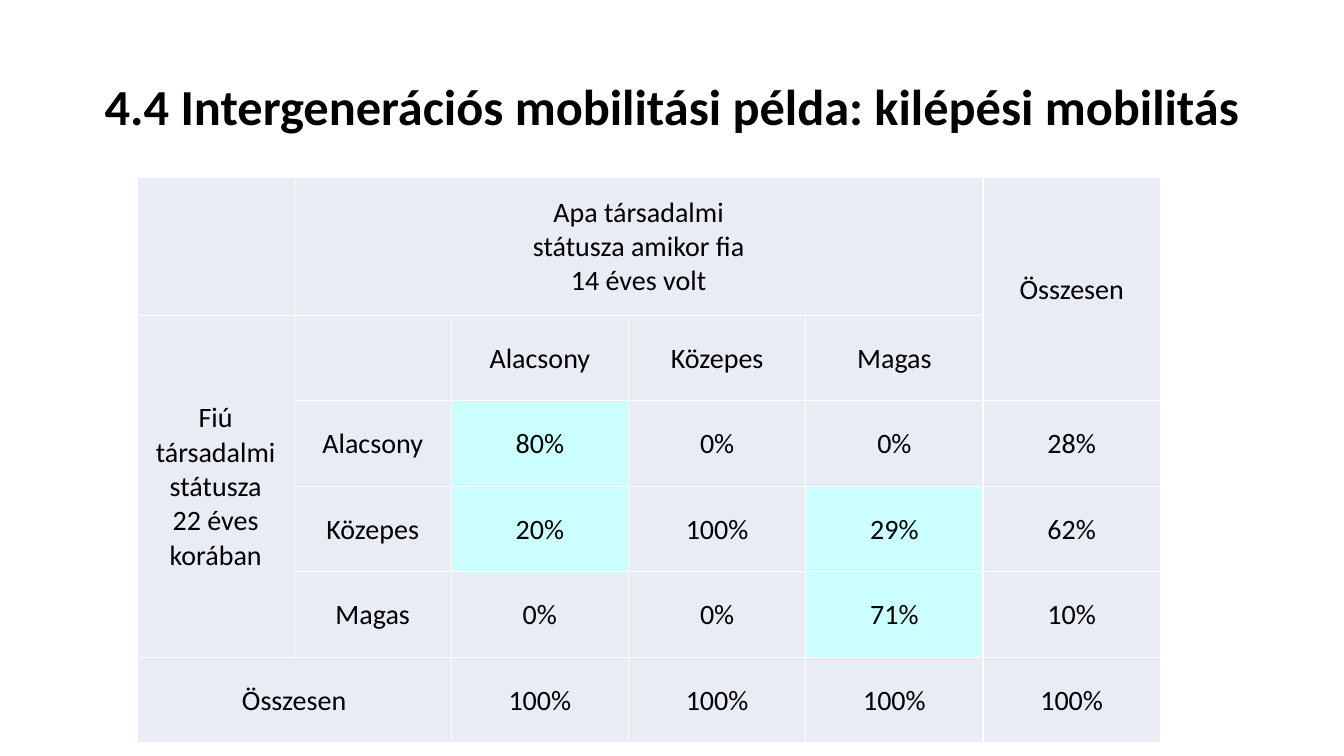
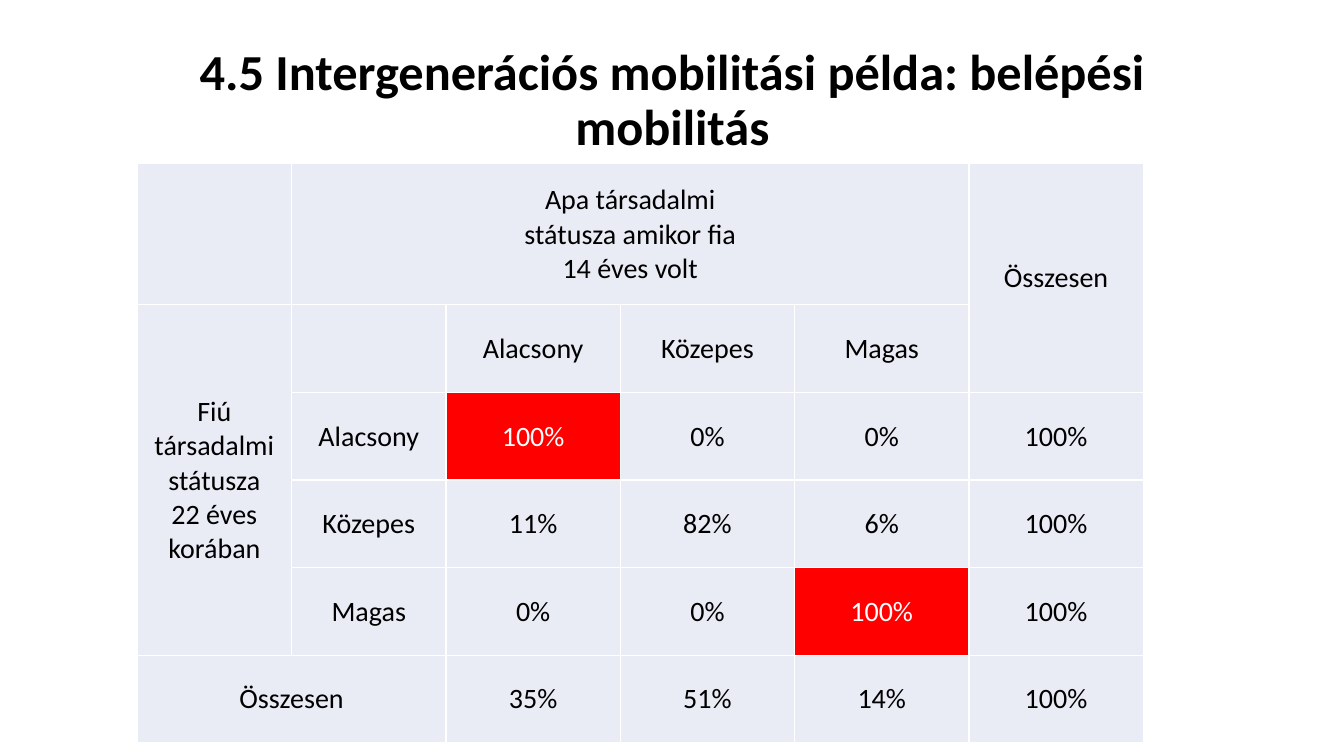
import collections

import pptx
import pptx.dml.color
import pptx.enum.text
import pptx.oxml
import pptx.oxml.ns
import pptx.util

Box = collections.namedtuple("Box", "left top width height")

SLIDE_WIDTH, SLIDE_HEIGHT = 13.33, 7.5
FONT = "Calibri"
BLACK, WHITE, PALE, CYAN, RED = "000000", "FFFFFF", "E9EBF5", "CCFFFF", "FF0000"
TITLE_FORMAT = {"name": FONT, "size": pptx.util.Pt(36), "bold": True}
CELL_FORMAT = {"name": FONT, "size": pptx.util.Pt(20), "bold": False}
CELL_MARGINS = {"margin_left": 0.01, "margin_right": 0.01, "margin_top": 0.01, "margin_bottom": 0}
COLUMN_SHARES = [0.886, 0.886, 1, 1, 1, 1]
ROW_SHARES = [1.615, 1, 1, 1, 1, 1]
LEVELS = ["Alacsony", "Közepes", "Magas"]
FATHER = "Apa társadalmi\nstátusza amikor fia\n14 éves volt"
SON = ["Fiú társadalmi\nstátusza", "22 éves\nkorában"]
TOTAL = "Összesen"
MERGES = [((0, 1), (0, 4)), ((0, 5), (1, 5)), ((1, 0), (4, 0)), ((5, 0), (5, 1))]

TITLE_LEFT, TITLE_TOP, TITLE_WIDTH = 0.92, 0.4, 11.5
TABLE_LEFT, TABLE_BOTTOM = 1.36, 7.37

SLIDES = [
    {
        "title": "4.4 Intergenerációs mobilitási példa: kilépési mobilitás",
        "title_height": 1.36,
        "table_width": 10.15,
        "shares": [
            ["80%", "0%", "0%", "28%"],
            ["20%", "100%", "29%", "62%"],
            ["0%", "0%", "71%", "10%"],
            ["100%", "100%", "100%", "100%"],
        ],
        "highlights": [(2, 2), (3, 2), (3, 4), (4, 4)],
        "highlight_colours": (CYAN, BLACK),
    },
    {
        "title": "4.5 Intergenerációs mobilitási példa: belépési mobilitás",
        "title_height": 1.22,
        "table_width": 9.98,
        "shares": [
            ["100%", "0%", "0%", "100%"],
            ["11%", "82%", "6%", "100%"],
            ["0%", "0%", "100%", "100%"],
            ["35%", "51%", "14%", "100%"],
        ],
        "highlights": [(2, 2), (4, 4)],
        "highlight_colours": (RED, WHITE),
    },
]


def colour(value):
    return pptx.dml.color.RGBColor.from_string(value)


def inches(box):
    return [pptx.util.Inches(length) for length in box]


def apply(target, values):
    for attribute, value in values.items():
        setattr(target, attribute, value)


def write(frame, paragraphs, font_format, ink):
    for index, text in enumerate(paragraphs):
        paragraph = frame.add_paragraph() if index else frame.paragraphs[0]
        paragraph.alignment = pptx.enum.text.PP_ALIGN.CENTER
        for number, line in enumerate(text.split("\n")):
            if number:
                paragraph.add_line_break()
            run = paragraph.add_run()
            run.text = line
            apply(run.font, font_format)
            run.font.color.rgb = colour(ink)


def add_title(slide, box, text):
    frame = slide.shapes.add_textbox(*inches(box)).text_frame
    frame.word_wrap = True
    frame.vertical_anchor = pptx.enum.text.MSO_ANCHOR.MIDDLE
    write(frame, [text], TITLE_FORMAT, BLACK)
    frame.paragraphs[0].line_spacing = 0.9


def add_borders(cell):
    properties = cell._tc.get_or_add_tcPr()
    for side in ("lnL", "lnR", "lnT", "lnB"):
        properties.append(pptx.oxml.parse_xml(
            f'<a:{side} {pptx.oxml.ns.nsdecls("a")} w="12700"><a:solidFill>'
            f'<a:srgbClr val="{WHITE}"/></a:solidFill></a:{side}>'
        ))


def style_cell(cell, fill):
    add_borders(cell)
    cell.fill.solid()
    cell.fill.fore_color.rgb = colour(fill)
    cell.vertical_anchor = pptx.enum.text.MSO_ANCHOR.MIDDLE
    apply(cell, {side: pptx.util.Inches(size) for side, size in CELL_MARGINS.items()})


def mobility_texts(shares):
    texts = {(0, 1): [FATHER], (0, 5): [TOTAL], (1, 0): SON, (5, 0): [TOTAL]}
    for index, level in enumerate(LEVELS, 2):
        texts[1, index] = texts[index, 1] = [level]
    for row, values in enumerate(shares, 2):
        for column, value in enumerate(values, 2):
            texts[row, column] = [value]
    return texts


def add_mobility_table(slide, box, shares, highlights, highlight_colours):
    table = slide.shapes.add_table(len(ROW_SHARES), len(COLUMN_SHARES), *inches(box)).table
    apply(table, {"first_row": False, "horz_banding": False})
    for column, share in zip(table.columns, COLUMN_SHARES):
        column.width = pptx.util.Inches(box.width * share / sum(COLUMN_SHARES))
    for row, share in zip(table.rows, ROW_SHARES):
        row.height = pptx.util.Inches(box.height * share / sum(ROW_SHARES))
    for first, last in MERGES:
        table.cell(*first).merge(table.cell(*last))
    texts = mobility_texts(shares)
    for row in range(len(ROW_SHARES)):
        for column in range(len(COLUMN_SHARES)):
            place = row, column
            fill, ink = highlight_colours if place in highlights else (PALE, BLACK)
            cell = table.cell(*place)
            style_cell(cell, fill)
            if place in texts:
                write(cell.text_frame, texts[place], CELL_FORMAT, ink)


def add_mobility_slide(deck, content):
    slide = deck.slides.add_slide(deck.slide_layouts[6])
    slide.background.fill.solid()
    slide.background.fill.fore_color.rgb = colour(WHITE)
    title_box = Box(TITLE_LEFT, TITLE_TOP, TITLE_WIDTH, content["title_height"])
    table_top = title_box.top + title_box.height
    table_box = Box(TABLE_LEFT, table_top, content["table_width"], TABLE_BOTTOM - table_top)
    add_title(slide, title_box, content["title"])
    add_mobility_table(
        slide, table_box, content["shares"], content["highlights"], content["highlight_colours"]
    )


def main():
    deck = pptx.Presentation()
    deck.slide_width = pptx.util.Inches(SLIDE_WIDTH)
    deck.slide_height = pptx.util.Inches(SLIDE_HEIGHT)
    for content in SLIDES:
        add_mobility_slide(deck, content)
    deck.save("out.pptx")


if __name__ == "__main__":
    main()
